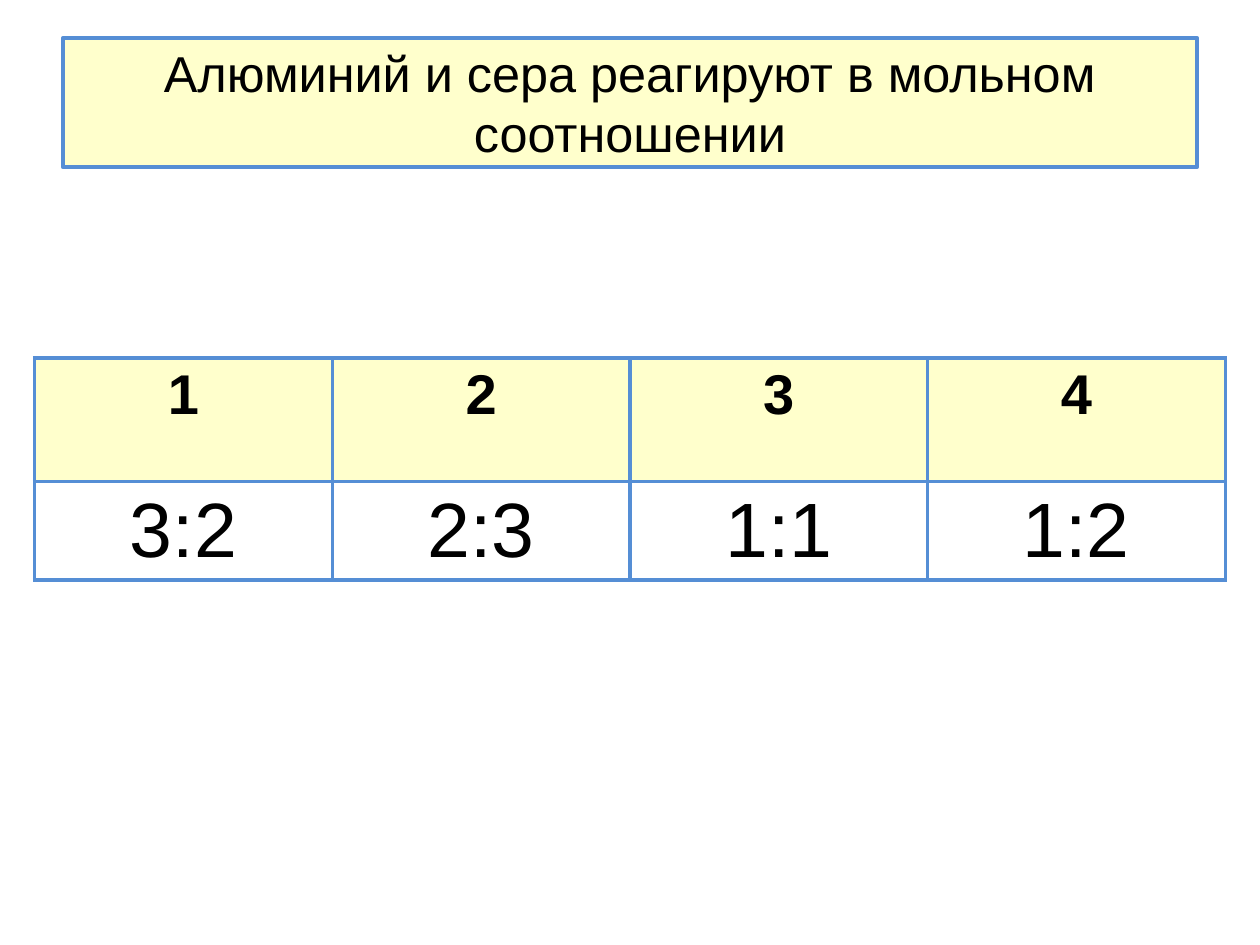
from dataclasses import dataclass

from lxml.etree import SubElement
from pptx import Presentation
from pptx.dml.color import RGBColor
from pptx.enum.text import MSO_ANCHOR, MSO_AUTO_SIZE, PP_ALIGN
from pptx.oxml.ns import qn
from pptx.util import Pt


@dataclass(frozen=True)
class Theme:
    font: str = "Arial"
    ink: str = "000000"
    cream: str = "FFFFCC"
    border: str = "558ED5"
    border_width: float = 2.25
    title_size: float = 28.8
    number_size: float = 32
    ratio_size: float = 44


@dataclass(frozen=True)
class Answer:
    number: str
    ratio: str


THEME = Theme()
TITLE = "Алюминий и сера реагируют в мольном соотношении"
ANSWERS = [Answer("1", "3:2"), Answer("2", "2:3"), Answer("3", "1:1"), Answer("4", "1:2")]
COLUMN_WIDTH = 170.1
ROW_HEIGHTS = (70.5, 56)


def write(frame, text: str, size: float, bold: bool = False) -> None:
    para = frame.paragraphs[0]
    para.alignment = PP_ALIGN.CENTER
    span = para.add_run()
    span.text = text
    span.font.name = THEME.font
    span.font.size = Pt(size)
    span.font.bold = bold
    span.font.color.rgb = RGBColor.from_string(THEME.ink)


def add_borders(cell) -> None:
    properties = cell._tc.get_or_add_tcPr()
    for position, side in enumerate(("lnL", "lnR", "lnT", "lnB")):
        line = SubElement(properties, qn(f"a:{side}"), w=str(Pt(THEME.border_width)))
        fill = SubElement(line, qn("a:solidFill"))
        SubElement(fill, qn("a:srgbClr"), val=THEME.border)
        properties.insert(position, line)


def draw_title(page) -> None:
    box = page.shapes.title
    box.left, box.top, box.width, box.height = Pt(36), Pt(21.6), Pt(648), Pt(74)
    box.fill.solid()
    box.fill.fore_color.rgb = RGBColor.from_string(THEME.cream)
    box.line.color.rgb = RGBColor.from_string(THEME.border)
    box.line.width = Pt(THEME.border_width)
    frame = box.text_frame
    frame.word_wrap = True
    frame.auto_size = MSO_AUTO_SIZE.NONE
    frame.vertical_anchor = MSO_ANCHOR.MIDDLE
    write(frame, TITLE, THEME.title_size)


def draw_answers(page, answers: list[Answer]) -> None:
    table = page.shapes.add_table(
        len(ROW_HEIGHTS), len(answers), Pt(19.8), Pt(204.5),
        Pt(COLUMN_WIDTH * len(answers)), Pt(sum(ROW_HEIGHTS)),
    ).table
    table.horz_banding = False
    for row, height in zip(table.rows, ROW_HEIGHTS):
        row.height = Pt(height)
    for index, answer in enumerate(answers):
        table.columns[index].width = Pt(COLUMN_WIDTH)
        head, body = table.cell(0, index), table.cell(1, index)
        head.fill.solid()
        head.fill.fore_color.rgb = RGBColor.from_string(THEME.cream)
        body.fill.background()
        write(head.text_frame, answer.number, THEME.number_size, bold=True)
        write(body.text_frame, answer.ratio, THEME.ratio_size)
        add_borders(head)
        add_borders(body)


def main() -> None:
    deck = Presentation()
    deck.slide_width, deck.slide_height = Pt(720), Pt(540)
    page = deck.slides.add_slide(deck.slide_layouts[5])
    draw_title(page)
    draw_answers(page, ANSWERS)
    deck.save("out.pptx")


if __name__ == "__main__":
    main()
